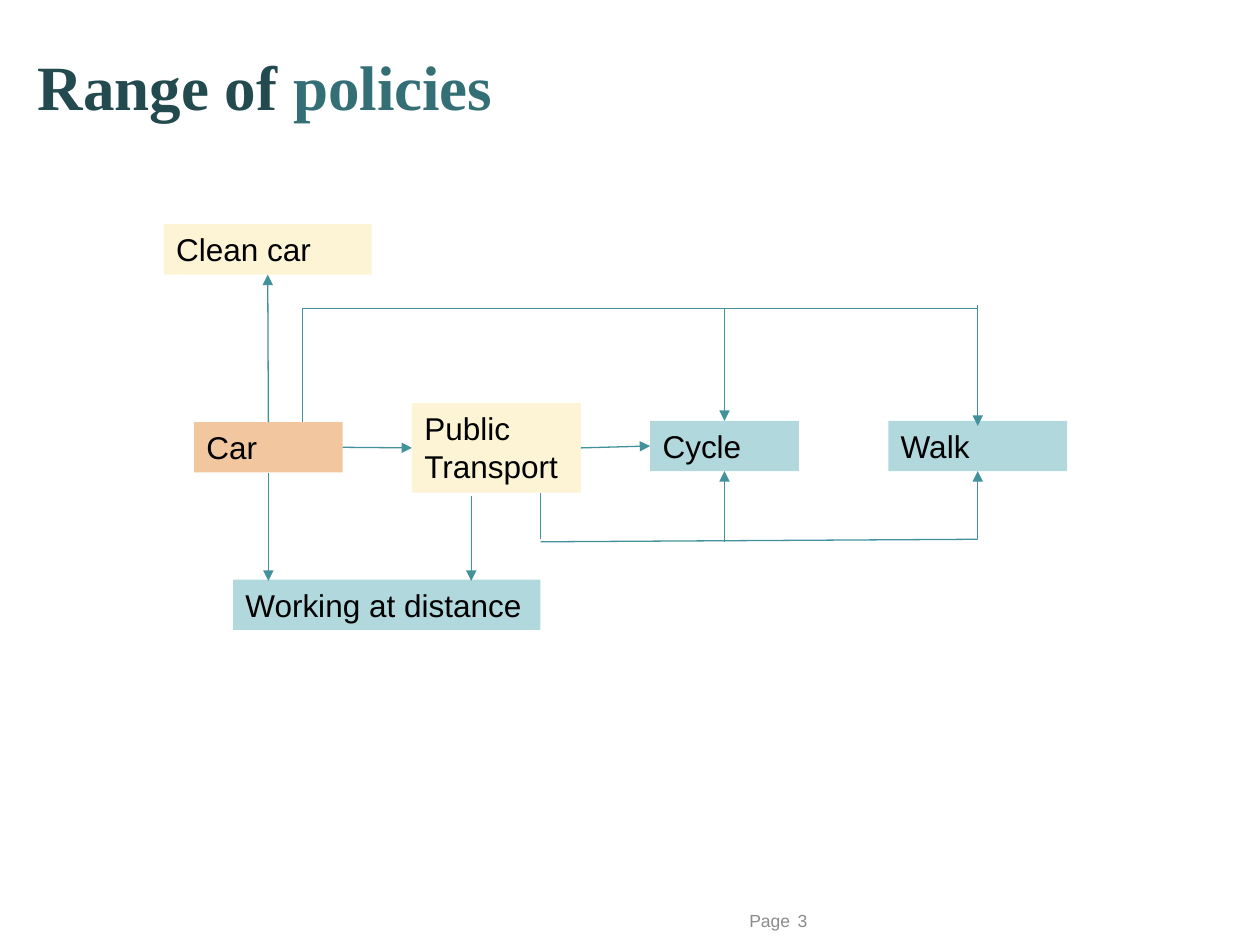
from lxml import etree
from pptx import Presentation
from pptx.dml.color import RGBColor
from pptx.enum.shapes import MSO_CONNECTOR, MSO_SHAPE
from pptx.enum.text import MSO_ANCHOR, PP_ALIGN
from pptx.oxml.ns import qn
from pptx.util import Inches, Pt

TEAL, ORANGE, CREAM, BLUE = "42929C", "F2C79F", "FDF4D6", "B1D8DC"
TOP, LEFT, BOTTOM, RIGHT = range(4)

# name: text, left, top, width, height, fill (inches from the diagram's corner)
BOXES = {
    "car": ("Car", 0.24, 1.57, 1.18, 0.4, ORANGE),
    "transit": ("Public Transport", 1.97, 1.42, 1.34, 0.71, CREAM),
    "cycle": ("Cycle", 3.86, 1.56, 1.18, 0.4, BLUE),
    "walk": ("Walk", 5.75, 1.56, 1.42, 0.4, BLUE),
    "distance": ("Working at distance", 0.55, 2.82, 2.44, 0.4, BLUE),
    "clean": ("Clean car", 0, 0, 1.65, 0.4, CREAM),
}

# from, to, arrowhead, joined start, joined end
LINES = [
    ((0.83, 1.57), (0.83, 0.41), True, ("car", TOP), ("clean", BOTTOM)),
    ((0.83, 1.97), (0.83, 2.83), True, ("car", BOTTOM), None),
    ((2.44, 2.16), (2.44, 2.83), True, None, None),
    ((1.42, 1.77), (1.97, 1.77), True, ("car", RIGHT), ("transit", LEFT)),
    ((3.31, 1.77), (3.86, 1.76), True, ("transit", RIGHT), ("cycle", LEFT)),
    # Upper branch from the car
    ((1.1, 1.57), (1.1, 0.67), False, None, None),
    ((1.1, 0.67), (6.46, 0.67), False, None, None),
    ((6.46, 0.64), (6.46, 1.6), True, None, None),
    ((4.45, 0.67), (4.45, 1.56), True, None, ("cycle", TOP)),
    # Lower branch from public transport
    ((2.99, 2.52), (6.46, 2.5), False, None, None),
    ((2.99, 2.13), (2.99, 2.5), False, None, None),
    ((4.45, 2.52), (4.45, 1.96), True, None, ("cycle", BOTTOM)),
    ((6.46, 2.5), (6.46, 1.96), True, None, ("walk", BOTTOM)),
]


def rgb(value):
    return RGBColor.from_string(value)


def add_run(p, text, size, font, color, bold=False):
    r = p.add_run()
    r.text = text
    r.font.size, r.font.name, r.font.bold = Pt(size), font, bold
    r.font.color.rgb = rgb(color)


def add_text(s, left, top, width, height, align=PP_ALIGN.LEFT):
    tf = s.shapes.add_textbox(Inches(left), Inches(top),
                              Inches(width), Inches(height)).text_frame
    tf.word_wrap = True
    tf.vertical_anchor = MSO_ANCHOR.MIDDLE
    tf.paragraphs[0].alignment = align
    return tf


def add_title(s, left, top, width, height):
    p = add_text(s, left, top, width, height).paragraphs[0]
    add_run(p, "Range of ", 36, "Times New Roman", "234A4E", True)
    add_run(p, "policies", 36, "Times New Roman", "346F76", True)


def add_footer(s, left, top, width, height):
    gap = 0.06
    part = (width - gap) / 2
    for i, (text, align) in enumerate([("Page", PP_ALIGN.RIGHT),
                                       ("3", PP_ALIGN.LEFT)]):
        tf = add_text(s, left + i * (part + gap), top, part, height, align)
        tf.margin_left = tf.margin_right = tf.margin_top = tf.margin_bottom = 0
        add_run(tf.paragraphs[0], text, 10, "Arial", "8C8C8C")


def add_box(s, text, left, top, width, height, fill):
    sp = s.shapes.add_shape(MSO_SHAPE.RECTANGLE, Inches(left), Inches(top),
                            Inches(width), Inches(height))
    sp.shadow.inherit = False
    sp.fill.solid()
    sp.fill.fore_color.rgb = rgb(fill)
    sp.line.fill.background()
    tf = sp.text_frame
    tf.word_wrap = True
    tf.vertical_anchor = MSO_ANCHOR.TOP
    p = tf.paragraphs[0]
    p.alignment = PP_ALIGN.LEFT
    add_run(p, text, 18, "Arial", "000000")
    return sp


def add_line(s, x1, y1, x2, y2, arrow):
    line = s.shapes.add_connector(MSO_CONNECTOR.STRAIGHT, Inches(x1), Inches(y1),
                                  Inches(x2), Inches(y2))
    line.line.color.rgb = rgb(TEAL)
    line.line.width = Pt(0.75)
    if arrow:
        etree.SubElement(line.line._get_or_add_ln(), qn("a:tailEnd"), type="triangle")
    etree.SubElement(line._element.spPr, qn("a:effectLst"))
    return line


def add_diagram(s, left, top):
    boxes = {name: add_box(s, text, left + x, top + y, w, h, fill)
             for name, (text, x, y, w, h, fill) in BOXES.items()}
    for (x1, y1), (x2, y2), arrow, start, end in LINES:
        line = add_line(s, left + x1, top + y1, left + x2, top + y2, arrow)
        if start:
            line.begin_connect(boxes[start[0]], start[1])
        if end:
            line.end_connect(boxes[end[0]], end[1])


def main():
    prs = Presentation()
    prs.slide_width, prs.slide_height = Inches(10), Inches(7.5)
    s = prs.slides.add_slide(prs.slide_layouts[6])
    add_title(s, 0.2, 0.02, 9.82, 1.31)
    add_diagram(s, 1.3, 1.78)
    add_footer(s, 5.79, 7.16, 1.02, 0.29)
    prs.save("out.pptx")


if __name__ == "__main__":
    main()
